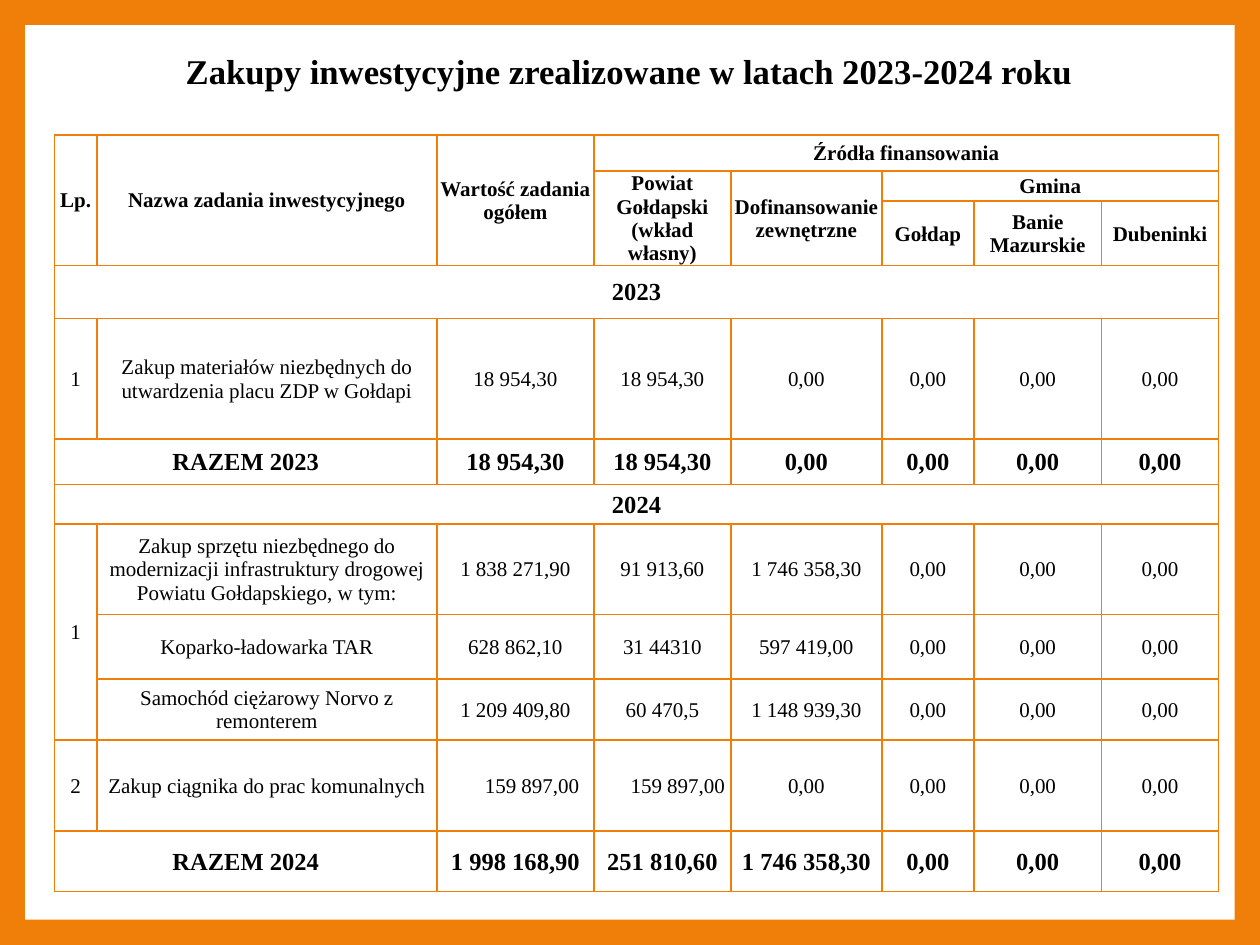
"""Build the slide with the 2023-2024 investment purchases table."""
from lxml import etree
from pptx import Presentation
from pptx.dml.color import RGBColor
from pptx.enum.shapes import MSO_SHAPE
from pptx.enum.text import MSO_ANCHOR, MSO_AUTO_SIZE, PP_ALIGN
from pptx.oxml.ns import qn
from pptx.util import Pt

RECTANGLE = MSO_SHAPE.RECTANGLE
MIDDLE = MSO_ANCHOR.MIDDLE
NO_AUTOFIT = MSO_AUTO_SIZE.NONE
CENTER, LEFT = PP_ALIGN.CENTER, PP_ALIGN.LEFT

ORANGE, WHITE, BLACK = "F07F09", "FFFFFF", "000000"
FONT = "Times New Roman"
INSET = 0.72

COLUMN_WIDTHS = [24.3, 194.3, 89.7, 78.3, 86.3, 52.6, 72.9, 67]
ROW_HEIGHTS = [20.6, 17.3, 34.6, 30.2, 69, 25.9, 22.6, 51.8, 36.9, 34.9, 51.8, 34.8]
HEADER_ROWS = range(3)
SUMMARY_ROWS = (3, 5, 6, 11)
SPANS = [
    (0, 0, 2, 0), (0, 1, 2, 1), (0, 2, 2, 2), (0, 3, 0, 7),
    (1, 3, 2, 3), (1, 4, 2, 4), (1, 5, 1, 7),
    (3, 0, 3, 7), (5, 0, 5, 1), (6, 0, 6, 7), (7, 0, 9, 0), (11, 0, 11, 1),
]
LEFT_INDENTS = {(10, 2): 27.4, (10, 3): 21}

ZERO = "0,00"
NO_GMINA = [ZERO] * 3
PURCHASES = [
    ["Lp.", "Nazwa zadania inwestycyjnego", "Wartość zadania ogółem",
     "Źródła finansowania"],
    ["", "", "", "Powiat Gołdapski (wkład własny)", "Dofinansowanie zewnętrzne",
     "Gmina"],
    ["", "", "", "", "", "Gołdap", "Banie Mazurskie", "Dubeninki"],
    ["2023"],
    ["1", "Zakup materiałów niezbędnych do utwardzenia placu ZDP w Gołdapi",
     "18 954,30", "18 954,30", ZERO, *NO_GMINA],
    ["RAZEM 2023", "", "18 954,30", "18 954,30", ZERO, *NO_GMINA],
    ["2024"],
    ["1", "Zakup sprzętu niezbędnego do modernizacji infrastruktury drogowej "
     "Powiatu Gołdapskiego, w tym:",
     "1 838 271,90", "91 913,60", "1 746 358,30", *NO_GMINA],
    ["", "Koparko-ładowarka TAR",
     "628 862,10", "31 44310", "597 419,00", *NO_GMINA],
    ["", "Samochód ciężarowy Norvo z remonterem",
     "1 209 409,80", "60 470,5", "1 148 939,30", *NO_GMINA],
    ["2", "Zakup ciągnika do prac komunalnych",
     "159 897,00", "159 897,00", ZERO, *NO_GMINA],
    ["RAZEM 2024", "", "1 998 168,90", "251 810,60", "1 746 358,30", *NO_GMINA],
]


def color(hex_code):
    """Return the colour for a hex string."""
    return RGBColor.from_string(hex_code)


def write(frame, text, size=12, bold=False, align=CENTER, spacing=1):
    """Write one formatted paragraph into a text frame."""
    paragraph = frame.paragraphs[0]
    paragraph.alignment = align
    paragraph.line_spacing = spacing
    run = paragraph.add_run()
    run.text = text
    run.font.name = FONT
    run.font.size = Pt(size)
    run.font.bold = bold
    run.font.color.rgb = color(BLACK)


def add_panel(slide):
    """Set the orange background and lay the white panel behind the title."""
    slide.background.fill.solid()
    slide.background.fill.fore_color.rgb = color(ORANGE)
    panel = slide.shapes.add_shape(RECTANGLE, Pt(14.4), Pt(14.4), Pt(691.2), Pt(511.2))
    panel.shadow.inherit = False
    panel.fill.solid()
    panel.fill.fore_color.rgb = color(WHITE)
    panel.line.fill.background()
    slide.shapes.title.element.addprevious(panel.element)


def add_title(slide, text):
    """Place and format the slide title."""
    title = slide.shapes.title
    title.left, title.top, title.width, title.height = Pt(67.7), Pt(24), Pt(583.2), Pt(36)
    frame = title.text_frame
    frame.auto_size = NO_AUTOFIT
    frame.word_wrap = True
    frame.vertical_anchor = MIDDLE
    write(frame, text, size=19.8, bold=True, spacing=0.9)


def outline_cell(cell):
    """Draw a thin orange border on all four sides of a cell."""
    properties = cell._tc.get_or_add_tcPr()
    for side in ("a:lnL", "a:lnR", "a:lnT", "a:lnB"):
        border = etree.SubElement(properties, qn(side), w=str(Pt(1)))
        fill = etree.SubElement(border, qn("a:solidFill"))
        etree.SubElement(fill, qn("a:srgbClr"), val=ORANGE)


def format_cell(cell, indent):
    """Set the border, fill, margins and anchor of a cell."""
    outline_cell(cell)
    cell.fill.background()
    cell.margin_left = Pt(indent)
    cell.margin_right = cell.margin_top = Pt(INSET)
    cell.margin_bottom = Pt(0)
    cell.vertical_anchor = MIDDLE


def add_purchases(slide):
    """Add the table of purchases and their sources of funding."""
    frame = slide.shapes.add_table(
        len(ROW_HEIGHTS), len(COLUMN_WIDTHS), Pt(31.1), Pt(77.1),
        Pt(sum(COLUMN_WIDTHS)), Pt(sum(ROW_HEIGHTS)))
    table = frame.table
    table.first_row = table.horz_banding = False
    for column, width in zip(table.columns, COLUMN_WIDTHS):
        column.width = Pt(width)
    for row, height in zip(table.rows, ROW_HEIGHTS):
        row.height = Pt(height)
    for top, left, bottom, right in SPANS:
        table.cell(top, left).merge(table.cell(bottom, right))
    for r, row in enumerate(table.rows):
        summary = r in SUMMARY_ROWS
        for c, cell in enumerate(row.cells):
            format_cell(cell, LEFT_INDENTS.get((r, c), INSET))
            if c < len(PURCHASES[r]) and not cell.is_spanned:
                write(cell.text_frame, PURCHASES[r][c],
                      size=14 if summary else 12,
                      bold=summary or r in HEADER_ROWS,
                      align=LEFT if (r, c) in LEFT_INDENTS else CENTER)


def main():
    """Build and save the presentation."""
    presentation = Presentation()
    presentation.slide_width, presentation.slide_height = Pt(720), Pt(540)
    slide = presentation.slides.add_slide(presentation.slide_layouts[5])
    add_panel(slide)
    add_title(slide, "Zakupy inwestycyjne zrealizowane w latach 2023-2024 roku")
    add_purchases(slide)
    presentation.save("out.pptx")


if __name__ == "__main__":
    main()
